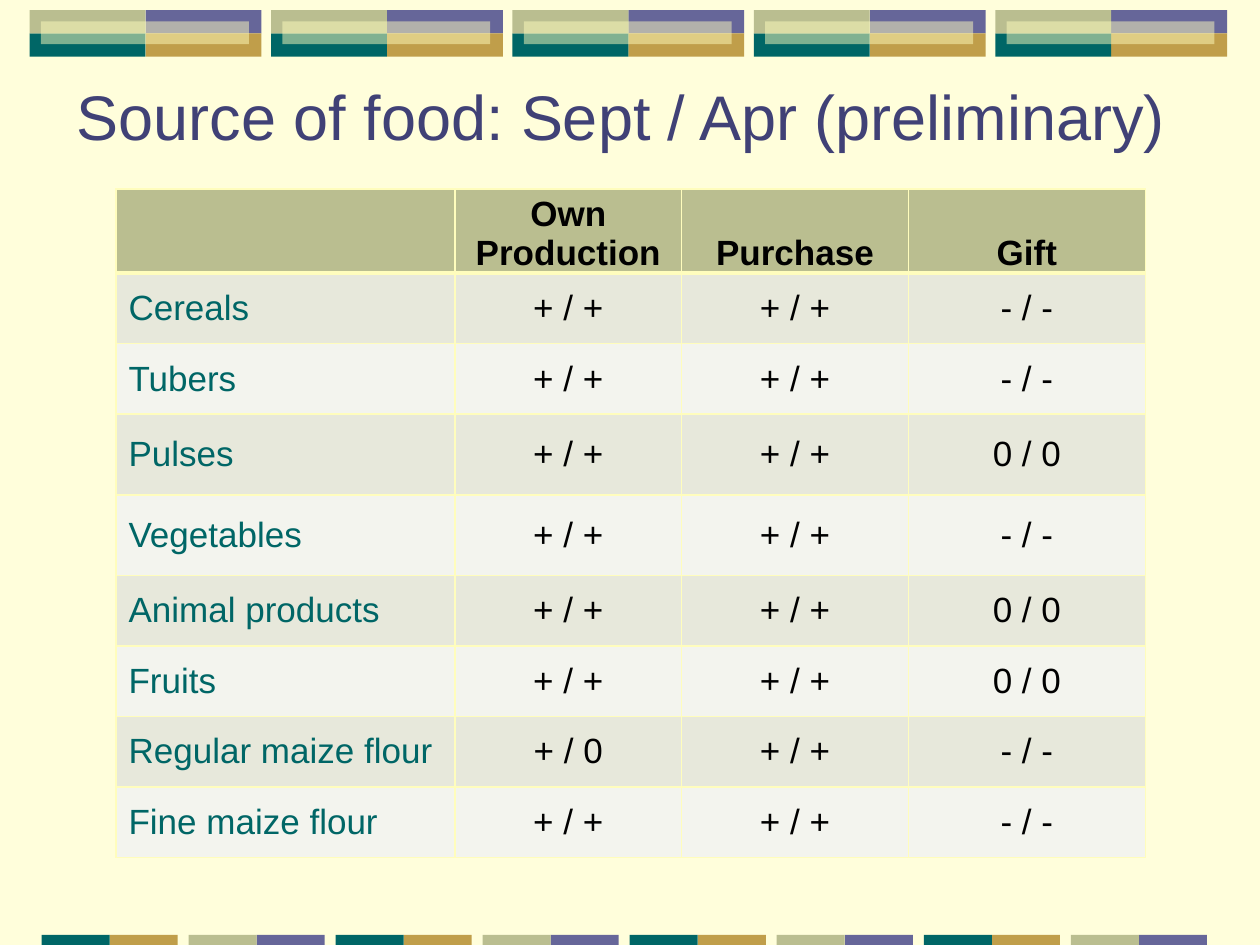
from lxml.etree import SubElement
from pptx import Presentation
from pptx.dml.color import RGBColor
from pptx.enum.shapes import MSO_SHAPE
from pptx.enum.text import MSO_ANCHOR, PP_ALIGN
from pptx.oxml.ns import qn
from pptx.util import Inches, Pt

COLORS = {
    "background": "FFFEDB",
    "title": "404176",
    "purple": "666699",
    "gold": "C09E4A",
    "teal": "006666",
    "olive": "BABE90",
    "cream": "FFFDBD",
    "odd_row": "E7E8DB",
    "even_row": "F3F4EE",
    "black": "000000",
}
FONT = "Arial"
HEADERS = ["", "Own Production", "Purchase", "Gift"]
FOOD_SOURCES = [
    ["Cereals", "+ / +", "+ / +", "- / -"],
    ["Tubers", "+ / +", "+ / +", "- / -"],
    ["Pulses", "+ / +", "+ / +", "0 / 0"],
    ["Vegetables", "+ / +", "+ / +", "- / -"],
    ["Animal products", "+ / +", "+ / +", "0 / 0"],
    ["Fruits", "+ / +", "+ / +", "0 / 0"],
    ["Regular maize flour", "+ / 0", "+ / +", "- / -"],
    ["Fine maize flour", "+ / +", "+ / +", "- / -"],
]
COLUMN_WIDTHS = [2.69, 1.8, 1.8, 1.88]
ROW_HEIGHTS = [0.64, 0.56, 0.56, 0.64, 0.64, 0.56, 0.56, 0.56, 0.56]


def color(name):
    return RGBColor.from_string(COLORS[name])


def add_rectangle(slide, left, top, width, height, fill, opacity=None):
    shape = slide.shapes.add_shape(
        MSO_SHAPE.RECTANGLE, Inches(left), Inches(top), Inches(width), Inches(height)
    )
    shape.shadow.inherit = False
    shape.line.fill.background()
    shape.fill.solid()
    shape.fill.fore_color.rgb = color(fill)
    if opacity is not None:
        fill_color = shape.fill._xPr.find(qn("a:solidFill"))[0]
        SubElement(fill_color, qn("a:alpha"), val=str(opacity * 1000))


def add_top_band(slide, left, top, count, pitch):
    width, height = 0.92, 0.185
    for index in range(count):
        x = left + index * pitch
        add_rectangle(slide, x + width, top, width, height, "purple")
        add_rectangle(slide, x + width, top + height, width, height, "gold")
        add_rectangle(slide, x, top + height, width, height, "teal")
        add_rectangle(slide, x, top, width, height, "olive")
        add_rectangle(slide, x + 0.09, top + 0.09, 1.65, 0.18, "cream", opacity=50)


def add_bottom_band(slide, left, top, count, pitch):
    width, height = 0.54, 0.08
    pairs = [("teal", "gold"), ("olive", "purple")]
    for index in range(count):
        x = left + index * pitch
        first, second = pairs[index % 2]
        add_rectangle(slide, x + width, top, width, height, second)
        add_rectangle(slide, x, top, width, height, first)


def format_text(text_frame, size, font_color, alignment, bold=False):
    paragraph = text_frame.paragraphs[0]
    paragraph.alignment = alignment
    paragraph.font.size = Pt(size)
    for run in paragraph.runs:
        run.font.name = FONT
        run.font.size = Pt(size)
        run.font.bold = bold
        run.font.color.rgb = color(font_color)


def add_title(slide, left, top, width, height):
    box = slide.shapes.add_textbox(
        Inches(left), Inches(top), Inches(width), Inches(height)
    )
    text_frame = box.text_frame
    text_frame.word_wrap = True
    text_frame.vertical_anchor = MSO_ANCHOR.MIDDLE
    text_frame.text = "Source of food: Sept / Apr (preliminary) "
    format_text(text_frame, 36, "title", PP_ALIGN.CENTER)


def set_borders(cell, bottom_width):
    properties = cell._tc.get_or_add_tcPr()
    for side, width in (("L", 1), ("R", 1), ("T", 1), ("B", bottom_width)):
        line = SubElement(properties, qn(f"a:ln{side}"), w=str(Pt(width)))
        fill = SubElement(line, qn("a:solidFill"))
        SubElement(fill, qn("a:srgbClr"), val=COLORS["cream"])


def format_cell(cell, row, column):
    is_header = row == 0
    is_label = column == 0
    set_borders(cell, 3 if is_header else 1)
    cell.fill.solid()
    cell.fill.fore_color.rgb = color(
        "olive" if is_header else "odd_row" if row % 2 else "even_row"
    )
    cell.vertical_anchor = MSO_ANCHOR.BOTTOM if is_header else MSO_ANCHOR.MIDDLE
    if not is_label:
        cell.margin_left = cell.margin_right = Inches(0.07)
        cell.margin_top = cell.margin_bottom = 0
    format_text(
        cell.text_frame,
        20,
        "teal" if is_label else "black",
        PP_ALIGN.LEFT if is_label else PP_ALIGN.CENTER,
        bold=is_header,
    )


def add_food_table(slide, left, top, width, height):
    rows = [HEADERS] + FOOD_SOURCES
    table = slide.shapes.add_table(
        len(rows), len(HEADERS),
        Inches(left), Inches(top), Inches(width), Inches(height),
    ).table
    for column, column_width in zip(table.columns, COLUMN_WIDTHS):
        column.width = Inches(column_width)
    for row, row_height in zip(table.rows, ROW_HEIGHTS):
        row.height = Inches(row_height)
    for row_index, values in enumerate(rows):
        for column_index, value in enumerate(values):
            cell = table.cell(row_index, column_index)
            cell.text_frame.text = value
            format_cell(cell, row_index, column_index)


def main():
    presentation = Presentation()
    presentation.slide_width = Inches(10)
    presentation.slide_height = Inches(7.5)
    slide = presentation.slides.add_slide(presentation.slide_layouts[6])
    slide.background.fill.solid()
    slide.background.fill.fore_color.rgb = color("background")
    add_top_band(slide, 0.235, 0.08, 5, 1.916)
    add_bottom_band(slide, 0.33, 7.42, 8, 1.167)
    add_title(slide, 0.25, 0.5, 9.5, 0.83)
    add_food_table(slide, 0.92, 1.5, 8.17, 5.28)
    presentation.save("out.pptx")


if __name__ == "__main__":
    main()
